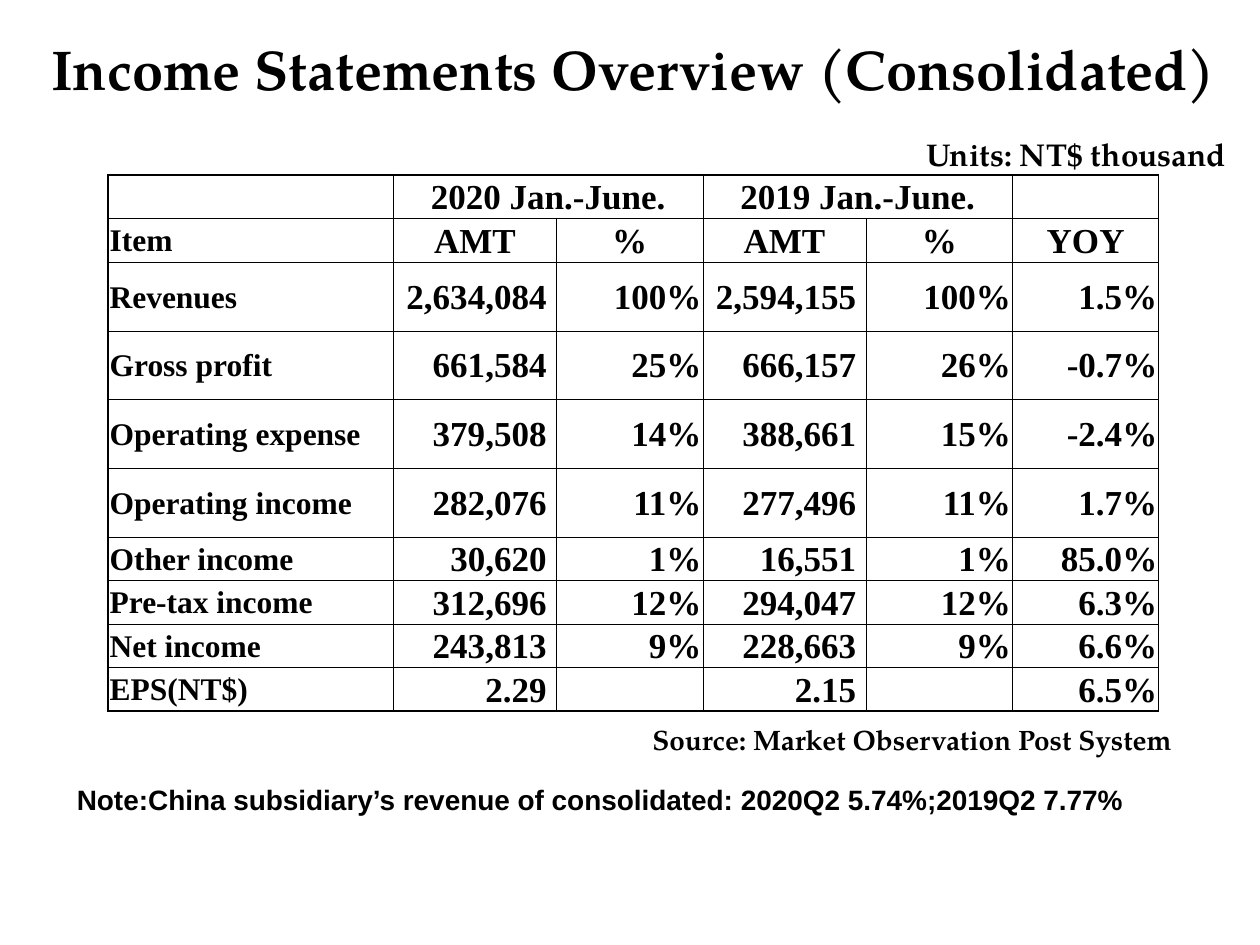
from lxml.etree import SubElement
from pptx import Presentation
from pptx.dml.color import RGBColor
from pptx.enum.text import MSO_ANCHOR, PP_ALIGN
from pptx.oxml.ns import qn
from pptx.util import Cm, Pt

HEADERS = [
    ["", "2020 Jan.-June.", "", "2019 Jan.-June.", "", ""],
    ["Item", "AMT", "%", "AMT", "%", "YOY"],
]
RESULTS = [
    ["Revenues", "2,634,084", "100%", "2,594,155", "100%", "1.5%"],
    ["Gross profit", "661,584", "25%", "666,157", "26%", "-0.7%"],
    ["Operating expense", "379,508", "14%", "388,661", "15%", "-2.4%"],
    ["Operating income", "282,076", "11%", "277,496", "11%", "1.7%"],
    ["Other income", "30,620", "1%", "16,551", "1%", "85.0%"],
    ["Pre-tax income", "312,696", "12%", "294,047", "12%", "6.3%"],
    ["Net income", "243,813", "9%", "228,663", "9%", "6.6%"],
    ["EPS(NT$)", "2.29", "", "2.15", "", "6.5%"],
]
COL_WIDTHS = [5.75, 3.29, 2.95, 3.29, 2.95, 2.95]
ROW_HEIGHTS = [0.87] * 2 + [1.385] * 4 + [0.87] * 4
AMOUNT_COLS = (1, 3)


def rgb(value):
    return RGBColor.from_string(value)


def write(tf, text, size=18, font="TeX Gyre Pagella", color="000000",
          bold=True, align=PP_ALIGN.LEFT):
    p = tf.paragraphs[0]
    p.alignment = align
    r = p.add_run()
    r.text = text
    r.font.size = Pt(size)
    r.font.name = font
    r.font.bold = bold
    r.font.color.rgb = rgb(color)


class StatementSlide:
    line_color = "000000"
    thin, thick = 0.5, 1.5
    table_font = "Times New Roman"

    def __init__(self, prs):
        self.s = prs.slides.add_slide(prs.slide_layouts[5])

    def title(self, text, left, top, width, height):
        sp = self.s.shapes.title
        sp.left, sp.top, sp.width, sp.height = map(Cm, (left, top, width, height))
        sp.text_frame.vertical_anchor = MSO_ANCHOR.MIDDLE
        write(sp.text_frame, text, size=32, align=PP_ALIGN.CENTER)

    def label(self, text, left, top, width, height, **style):
        sp = self.s.shapes.add_textbox(*map(Cm, (left, top, width, height)))
        sp.text_frame.word_wrap = True
        write(sp.text_frame, text, **style)

    def borders(self, cell, widths):
        tcPr = cell._tc.get_or_add_tcPr()
        for side, width in zip("LRTB", widths):
            ln = SubElement(tcPr, qn(f"a:ln{side}"), w=str(Pt(width)))
            fill = SubElement(ln, qn("a:solidFill"))
            SubElement(fill, qn("a:srgbClr"), val=self.line_color)

    def table(self, headers, results, left, top):
        rows = headers + results
        frame = self.s.shapes.add_table(
            len(rows), len(COL_WIDTHS), Cm(left), Cm(top),
            Cm(sum(COL_WIDTHS)), Cm(sum(ROW_HEIGHTS)))
        tbl = frame.table
        tbl.first_row = tbl.horz_banding = False
        for col, width in zip(tbl.columns, COL_WIDTHS):
            col.width = Cm(width)
        for row, height in zip(tbl.rows, ROW_HEIGHTS):
            row.height = Cm(height)
        for i, values in enumerate(rows):
            for j, text in enumerate(values):
                cell = tbl.cell(i, j)
                cell.vertical_anchor = MSO_ANCHOR.MIDDLE
                cell.margin_left = cell.margin_right = cell.margin_top = Cm(0.03)
                cell.margin_bottom = 0
                self.borders(cell, [
                    self.thick if j == 0 else self.thin,
                    self.thin,
                    self.thick if i == 0 else self.thin,
                    self.thick if i == len(rows) - 1 else self.thin,
                ])
                cell.fill.background()
                if j == 0:
                    size, align = 18, PP_ALIGN.LEFT
                elif i < len(headers):
                    size, align = 20, PP_ALIGN.CENTER
                else:
                    size, align = 20, PP_ALIGN.RIGHT
                    if j in AMOUNT_COLS:
                        cell.margin_right = Cm(0.2)
                if text:
                    write(cell.text_frame, text, size=size,
                          font=self.table_font, align=align)
        for j in AMOUNT_COLS:
            tbl.cell(0, j).merge(tbl.cell(0, j + 1))


def main():
    prs = Presentation()
    prs.slide_width, prs.slide_height = Cm(25.4), Cm(19.05)
    s = StatementSlide(prs)
    s.title("Income Statements Overview (Consolidated)", 0.5, 0.43, 24.56, 1.9)
    s.label("Units: NT$ thousand", 18.42, 2.6, 7, 1.02)
    s.table(HEADERS, RESULTS, 2.18, 3.53)
    s.label("Source: Market Observation Post System", 12.9, 14.45, 11.02, 0.94,
            size=16)
    s.label("Note:China subsidiary’s revenue of consolidated: "
            "2020Q2 5.74%;2019Q2 7.77%", 1.3, 15.65, 25.3, 2.39,
            size=16, font="Arial")
    prs.save("out.pptx")


if __name__ == "__main__":
    main()
